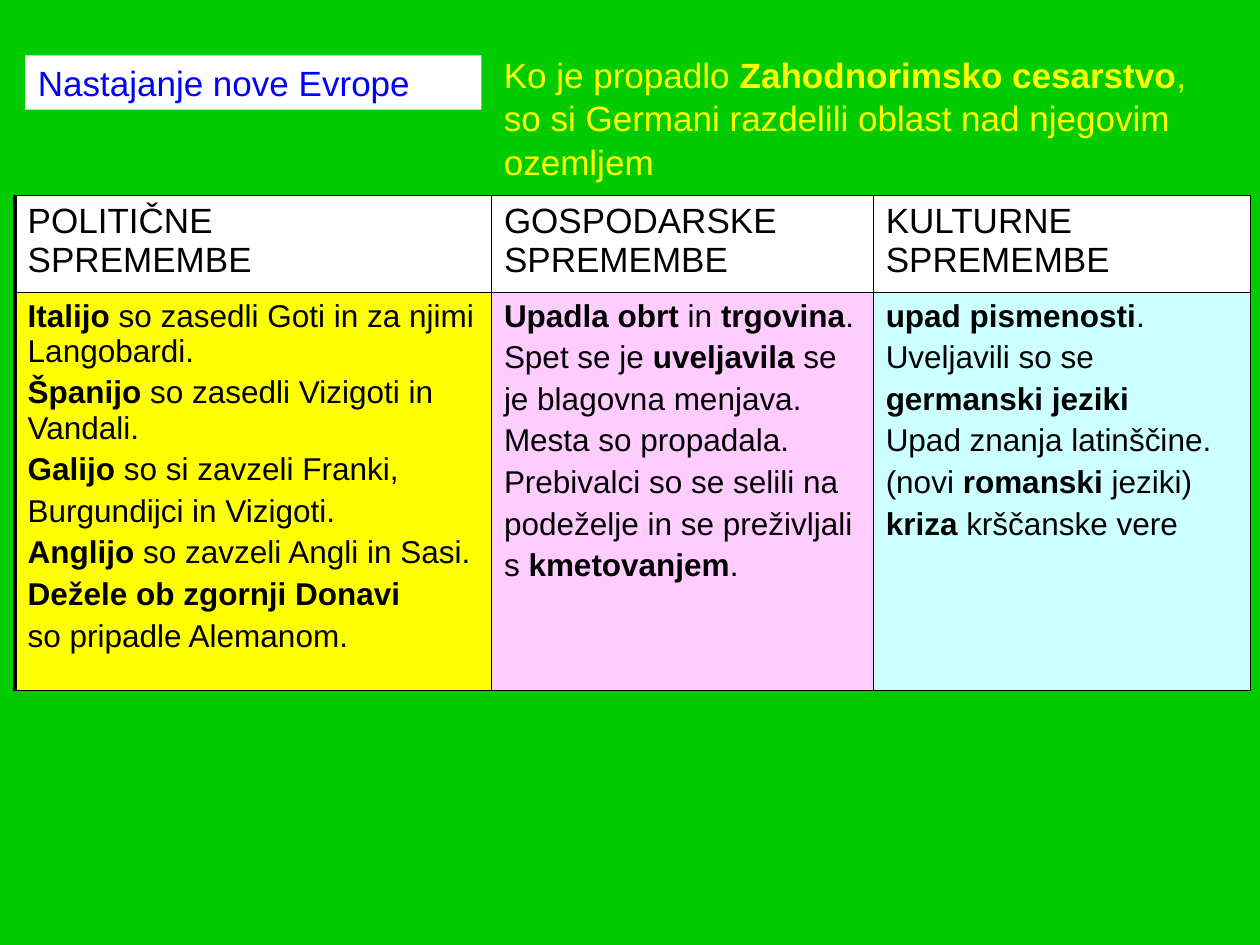
from lxml import etree
from pptx import Presentation
from pptx.dml.color import RGBColor
from pptx.enum.text import MSO_ANCHOR, PP_ALIGN
from pptx.oxml.ns import qn
from pptx.util import Inches, Pt

LEFT = PP_ALIGN.LEFT
TOP = MSO_ANCHOR.TOP
MIDDLE = MSO_ANCHOR.MIDDLE
TITLE_ONLY = 5
FONT = "Arial"

COLORS = {
    "background": "00CC00",
    "white": "FFFFFF",
    "title": "0000FF",
    "intro": "FFFF00",
    "text": "000000",
    "political": "FFFF00",
    "economic": "FFCCFF",
    "cultural": "CCFFFF",
}

INTRO = ("Ko je propadlo **Zahodnorimsko cesarstvo**, "
         "so si Germani razdelili oblast nad njegovim ozemljem")

# Heading, fill, column width and paragraphs; ** marks bold text
CHANGES = [
    ("POLITIČNE\vSPREMEMBE", "political", 3.78, [
        "**Italijo** so zasedli Goti in za njimi Langobardi.",
        "**Španijo** so zasedli Vizigoti in Vandali.",
        "**Galijo** so si zavzeli Franki,",
        "Burgundijci in Vizigoti.",
        "**Anglijo** so zavzeli Angli in Sasi.",
        "**Dežele ob zgornji Donavi**",
        "so pripadle Alemanom.",
    ]),
    ("GOSPODARSKE SPREMEMBE", "economic", 3.03, [
        "**Upadla obrt** in **trgovina**.",
        "Spet se je **uveljavila** se",
        "je blagovna menjava.",
        "Mesta so propadala.",
        "Prebivalci so se selili na",
        "podeželje in se preživljali",
        "s **kmetovanjem**.",
    ]),
    ("KULTURNE SPREMEMBE", "cultural", 2.99, [
        "**upad pismenosti**.",
        "Uveljavili so se",
        "**germanski jeziki**",
        "Upad znanja latinščine.",
        "(novi **romanski** jeziki)",
        "**kriza** krščanske vere",
    ]),
]
ROW_HEIGHTS = [0.77, 3.16]
THIN, MEDIUM, THICK = 0.25, 1, 2.25


def rgb(name):
    return RGBColor.from_string(COLORS[name])


def write_paragraph(paragraph, marked_text, size, color):
    """Write text whose bold parts stand between ** marks."""
    paragraph.alignment = LEFT
    paragraph.font.size = Pt(size)
    for index, part in enumerate(marked_text.split("**")):
        if not part:
            continue
        for position, line in enumerate(part.split("\v")):
            if position:
                paragraph.add_line_break()
            run = paragraph.add_run()
            run.text = line
            run.font.name = FONT
            run.font.size = Pt(size)
            run.font.bold = index % 2 == 1
            run.font.color.rgb = rgb(color)


def set_borders(cell, **widths):
    """Draw black borders; lines go before the fill in the cell properties."""
    properties = cell._tc.get_or_add_tcPr()
    for index, (side, width) in enumerate(widths.items()):
        line = etree.Element(qn(f"a:{side}"), w=str(Pt(width)))
        fill = etree.SubElement(line, qn("a:solidFill"))
        etree.SubElement(fill, qn("a:srgbClr"), val=COLORS["text"])
        properties.insert(index, line)


def fill_cell(cell, paragraphs, size, fill):
    cell.fill.solid()
    cell.fill.fore_color.rgb = rgb(fill)
    cell.vertical_anchor = TOP
    frame = cell.text_frame
    for index, text in enumerate(paragraphs):
        paragraph = frame.add_paragraph() if index else frame.paragraphs[0]
        if index:
            paragraph.space_before = Pt(size * 0.2)
        write_paragraph(paragraph, text, size, "text")


def add_title(slide):
    title = slide.shapes.title
    title.left, title.top = Inches(0.2), Inches(0.44)
    title.width, title.height = Inches(3.62), Inches(0.43)
    title.fill.solid()
    title.fill.fore_color.rgb = rgb("white")
    title.text_frame.vertical_anchor = MIDDLE
    write_paragraph(title.text_frame.paragraphs[0],
                    "Nastajanje nove Evrope", 20, "title")


def add_intro(slide):
    intro = slide.shapes.add_textbox(Inches(3.9), Inches(0.36),
                                     Inches(5.62), Inches(1.1))
    intro.text_frame.word_wrap = True
    paragraph = intro.text_frame.paragraphs[0]
    paragraph.line_spacing = 1.04
    write_paragraph(paragraph, INTRO, 20, "intro")


def add_changes_table(slide):
    table = slide.shapes.add_table(
        len(ROW_HEIGHTS), len(CHANGES), Inches(0.12), Inches(1.55),
        Inches(9.8), Inches(sum(ROW_HEIGHTS))).table
    table.first_row = table.horz_banding = False
    for row, height in zip(table.rows, ROW_HEIGHTS):
        row.height = Inches(height)
    for index, (heading, fill, width, paragraphs) in enumerate(CHANGES):
        table.columns[index].width = Inches(width)
        left = THIN if index else THICK
        header, body = table.cell(0, index), table.cell(1, index)
        fill_cell(header, [heading], 20, "white")
        set_borders(header, lnL=left, lnR=THIN, lnT=THIN, lnB=MEDIUM)
        fill_cell(body, paragraphs, 18, fill)
        set_borders(body, lnL=left, lnR=THIN, lnT=MEDIUM, lnB=THIN)


def main():
    presentation = Presentation()
    presentation.slide_width = Inches(10)
    presentation.slide_height = Inches(7.5)
    slide = presentation.slides.add_slide(
        presentation.slide_layouts[TITLE_ONLY])
    slide.background.fill.solid()
    slide.background.fill.fore_color.rgb = rgb("background")
    add_title(slide)
    add_changes_table(slide)
    add_intro(slide)
    presentation.save("out.pptx")


if __name__ == "__main__":
    main()
